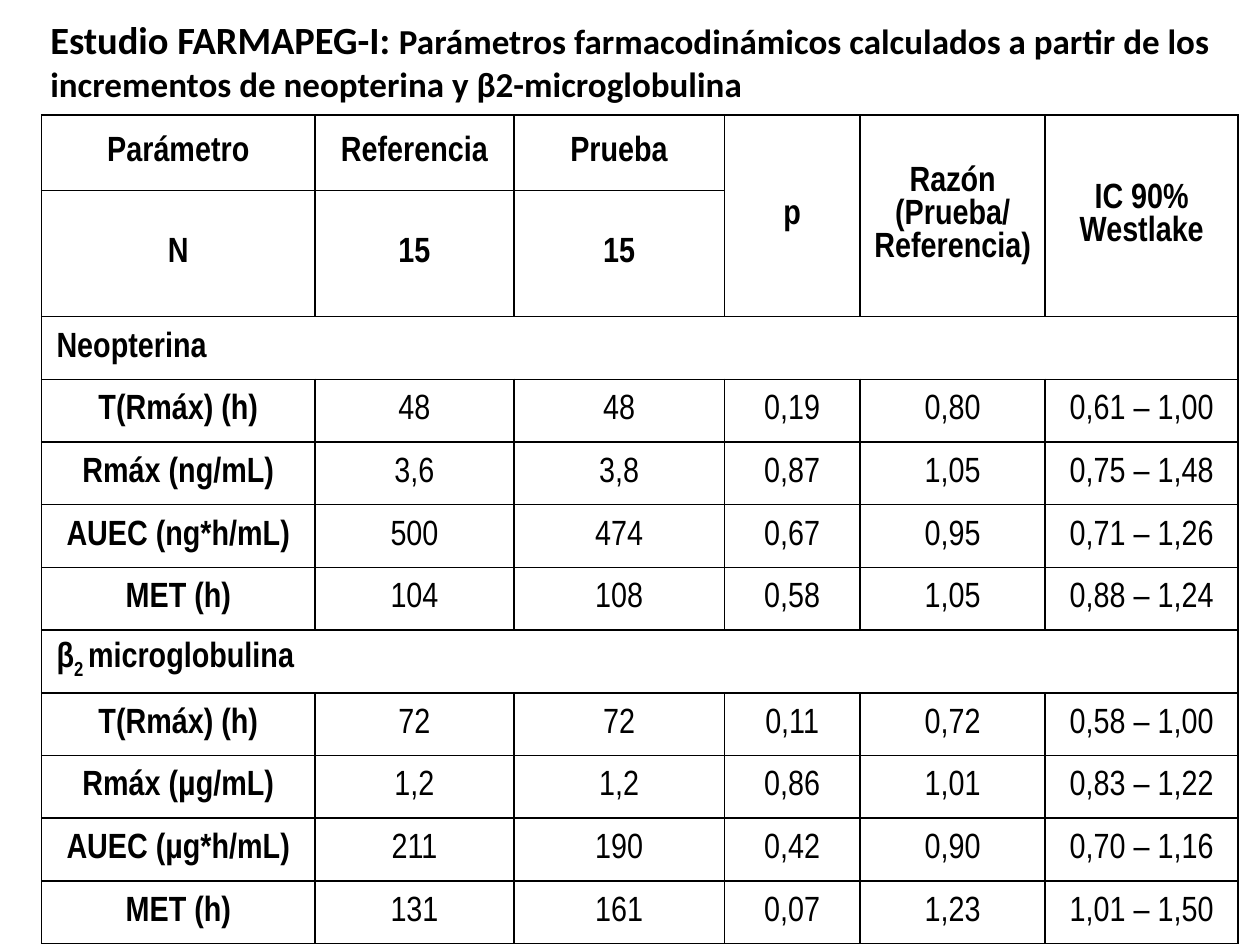
"""Build the slide with the table of pharmacodynamic parameters."""
from dataclasses import dataclass

from lxml.etree import SubElement
from pptx import Presentation
from pptx.dml.color import RGBColor as Rgb
from pptx.enum.text import MSO_ANCHOR as Anchor, MSO_AUTO_SIZE as Fit, PP_ALIGN as Align
from pptx.oxml.ns import qn
from pptx.util import Cm, Pt


@dataclass(frozen=True)
class Theme:
    ink: str = "000000"
    paper: str = "FFFFFF"
    head: str = "Calibri"
    body: str = "Arial Narrow"
    big: int = 22
    size: int = 20
    line: int = 1


theme = Theme()


def write(frame, parts, font=theme.body, bold=True, align=Align.CENTER,
          before=5, after=5, indent=0):
    para = frame.paragraphs[0]
    para.alignment = align
    para.line_spacing = 1.0
    para.space_before, para.space_after = Pt(before), Pt(after)
    if indent:
        para._p.get_or_add_pPr().set("indent", str(Cm(indent)))
    for text, size, base in parts:
        for num, line in enumerate(text.split("\n")):
            if num:
                para.add_line_break()
            run = para.add_run()
            run.text = line
            run.font.name, run.font.size, run.font.bold = font, Pt(size), bold
            run.font.color.rgb = Rgb.from_string(theme.ink)
            if base:
                run._r.get_or_add_rPr().set("baseline", str(base * 1000))


def border(cell):
    props = cell._tc.get_or_add_tcPr()
    for side in ("lnL", "lnR", "lnT", "lnB"):
        line = SubElement(props, qn(f"a:{side}"), w=str(Pt(theme.line)))
        fill = SubElement(line, qn("a:solidFill"))
        SubElement(fill, qn("a:srgbClr"), val=theme.ink)


deck = Presentation()
deck.slide_width, deck.slide_height = Cm(25.4), Cm(19.05)
slide = deck.slides.add_slide(deck.slide_layouts[5])

title = slide.shapes.title
title.left, title.top, title.width, title.height = Cm(0.76), Cm(0.2), Cm(24.2), Cm(3.2)
frame = title.text_frame
frame.word_wrap = True
frame.auto_size = Fit.SHAPE_TO_FIT_TEXT
frame.vertical_anchor = Anchor.TOP
write(frame, [
    ("Estudio FARMAPEG-I: ", theme.big, 0),
    ("Parámetros farmacodinámicos calculados a partir de los incrementos "
     "de neopterina y β2-microglobulina", theme.size, 0),
], font=theme.head, align=Align.LEFT, before=0, after=6)

rows = [
    ("Parámetro", "Referencia", "Prueba", "p",
     "Razón\n(Prueba/\nReferencia)", "IC 90%\nWestlake"),
    ("N", "15", "15"),
    ("Neopterina",),
    ("T(Rmáx) (h)", "48", "48", "0,19", "0,80", "0,61 – 1,00"),
    ("Rmáx (ng/mL)", "3,6", "3,8", "0,87", "1,05", "0,75 – 1,48"),
    ("AUEC (ng*h/mL)", "500", "474", "0,67", "0,95", "0,71 – 1,26"),
    ("MET (h)", "104", "108", "0,58", "1,05", "0,88 – 1,24"),
    ("β", "2 ", "microglobulina"),
    ("T(Rmáx) (h)", "72", "72", "0,11", "0,72", "0,58 – 1,00"),
    ("Rmáx (µg/mL)", "1,2", "1,2", "0,86", "1,01", "0,83 – 1,22"),
    ("AUEC (µg*h/mL)", "211", "190", "0,42", "0,90", "0,70 – 1,16"),
    ("MET (h)", "131", "161", "0,07", "1,23", "1,01 – 1,50"),
]
bands = (2, 7)
wide = [5.51, 4.01, 4.24, 2.74, 3.73, 3.89]
high = [1.52, 2.54] + [1.265] * 10

table = slide.shapes.add_table(len(rows), len(wide), Cm(0.84), Cm(2.32),
                               Cm(sum(wide)), Cm(sum(high))).table
table.first_row = table.horz_banding = False
for col, size in zip(table.columns, wide):
    col.width = Cm(size)
for row, size in zip(table.rows, high):
    row.height = Cm(size)
for col in (3, 4, 5):
    table.cell(0, col).merge(table.cell(1, col))
for row in bands:
    table.cell(row, 0).merge(table.cell(row, 5))

for row, texts in enumerate(rows):
    for col in range(len(wide)):
        cell = table.cell(row, col)
        border(cell)
        if row < 2:
            cell.fill.solid()
            cell.fill.fore_color.rgb = Rgb.from_string(theme.paper)
        else:
            cell.fill.background()
        cell.vertical_anchor = Anchor.MIDDLE
        cell.margin_left = cell.margin_right = cell.margin_top = cell.margin_bottom = 0
        if cell.is_spanned:
            continue
        if row in bands:
            parts = [(text, theme.size, base) for text, base in zip(texts, (0, -25, 0))]
            write(cell.text_frame, parts, align=Align.LEFT, indent=0.3)
        else:
            write(cell.text_frame, [(texts[col], theme.size, 0)],
                  bold=row < 2 or col == 0)

deck.save("out.pptx")
